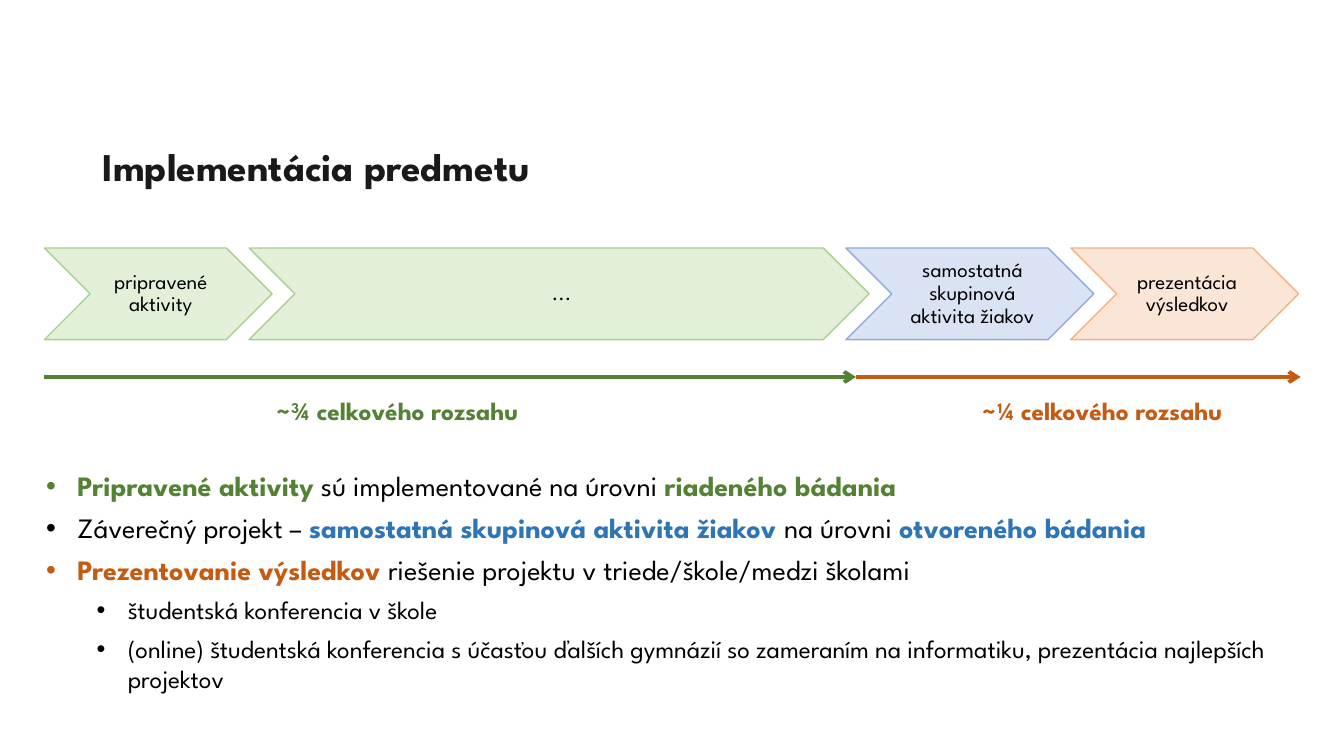
from lxml import etree
from pptx import Presentation
from pptx.dml.color import RGBColor
from pptx.enum.dml import MSO_THEME_COLOR
from pptx.enum.shapes import MSO_CONNECTOR, MSO_SHAPE
from pptx.enum.text import MSO_ANCHOR, PP_ALIGN
from pptx.oxml.ns import qn
from pptx.util import Inches, Pt

FONT = "League Spartan"
COLORS = {
    "title": "1A1819", "text": "000000",
    "green": "548235", "blue": "2E75B6", "orange": "C55A11",
    "green fill": "E2F0D9", "green line": "A9D18E",
    "blue fill": "DAE3F3", "blue line": "8FAADC",
    "orange fill": "FBE5D6", "orange line": "F4B183",
}


def rgb(name):
    return RGBColor.from_string(COLORS[name])


def write_spans(para, size, spans):
    """Set the paragraph font and add (text, color) spans; colored ones are bold."""
    para.font.name = FONT
    para.font.size = Pt(size)
    for text, color in spans:
        span = para.add_run()
        span.text = text
        span.font.color.rgb = rgb(color)
        span.font.bold = color != "text"


deck = Presentation()
deck.slide_width = Inches(13.33)
deck.slide_height = Inches(7.5)
page = deck.slides.add_slide(deck.slide_layouts[6])

# Title
box = page.shapes.add_textbox(Inches(0.92), Inches(1.11), Inches(12.83), Inches(1.12))
frame = box.text_frame
frame.word_wrap = True
frame.vertical_anchor = MSO_ANCHOR.MIDDLE
frame.paragraphs[0].line_spacing = 0.9
write_spans(frame.paragraphs[0], 28, [("Implementácia predmetu", "title")])

# Course phases as a chain of chevrons
phases = [
    ("pripravené aktivity", 2.26, "green"),
    ("...", 6.15, "green"),
    ("samostatná skupinová aktivita žiakov", 2.46, "blue"),
    ("prezentácia výsledkov", 2.26, "orange"),
]
left, overlap = 0.44, 0.23
for text, width, color in phases:
    chevron = page.shapes.add_shape(
        MSO_SHAPE.CHEVRON, Inches(left), Inches(2.46), Inches(width), Inches(0.91))
    chevron.shadow.inherit = False
    chevron.fill.solid()
    chevron.fill.fore_color.rgb = rgb(f"{color} fill")
    chevron.line.color.rgb = rgb(f"{color} line")
    chevron.line.width = Pt(1)
    frame = chevron.text_frame
    frame.word_wrap = True
    frame.vertical_anchor = MSO_ANCHOR.MIDDLE
    frame.margin_left = Inches(0.07)
    frame.margin_top = frame.margin_right = frame.margin_bottom = Inches(0.02)
    para = frame.paragraphs[0]
    para.alignment = PP_ALIGN.CENTER
    para.line_spacing = 0.9
    write_spans(para, 15, [(text, "text")])
    left += width - overlap

# Share of the course time
for start, end, color in [(0.44, 8.49, "green"), (8.49, 12.9, "orange")]:
    arrow = page.shapes.add_connector(
        MSO_CONNECTOR.STRAIGHT, Inches(start), Inches(3.74), Inches(end), Inches(3.74))
    arrow.line.color.rgb = rgb(color)
    arrow.line.width = Pt(2.75)
    etree.SubElement(arrow.line._get_or_add_ln(), qn("a:tailEnd"), type="arrow")
    etree.SubElement(arrow._element.spPr, qn("a:effectLst"))

box = page.shapes.add_textbox(Inches(2.64), Inches(3.87), Inches(10.16), Inches(0.4))
box.text_frame.word_wrap = True
para = box.text_frame.paragraphs[0]
tabs = etree.SubElement(para._p.get_or_add_pPr(), qn("a:tabLst"))
etree.SubElement(tabs, qn("a:tab"), pos=str(Inches(7)), algn="l")
write_spans(para, 18, [("~¾ celkového rozsahu\t", "green"), ("~¼ celkového rozsahu", "orange")])

# Bullets: level and spans
bullets = [
    (0, [("Pripravené aktivity", "green"), (" sú implementované na úrovni ", "text"),
         ("riadeného bádania", "green")]),
    (0, [("Záverečný projekt – ", "text"), ("samostatná skupinová aktivita žiakov ", "blue"),
         ("na úrovni ", "text"), ("otvoreného bádania", "blue")]),
    (0, [("Prezentovanie výsledkov ", "orange"),
         ("riešenie projektu v triede/škole/medzi školami", "text")]),
    (1, [("študentská konferencia v škole", "text")]),
    (1, [("(online) študentská konferencia s účasťou ďalších gymnázií so zameraním na "
          "informatiku, prezentácia najlepších projektov", "text")]),
]
box = page.shapes.add_textbox(Inches(0.36), Inches(4.6), Inches(12.54), Inches(2.36))
frame = box.text_frame
frame.word_wrap = True
for index, (level, spans) in enumerate(bullets):
    para = frame.add_paragraph() if index else frame.paragraphs[0]
    para.level = level
    properties = para._p.get_or_add_pPr()
    properties.set("marL", str(Inches(0.31 + 0.5 * level)))
    properties.set("indent", str(Inches(-0.31)))
    etree.SubElement(properties, qn("a:buFont"), typeface="Arial")
    etree.SubElement(properties, qn("a:buChar"), char="•")
    para.space_after = Pt(6)
    write_spans(para, 20 - 2 * level, spans)

deck.save("out.pptx")
